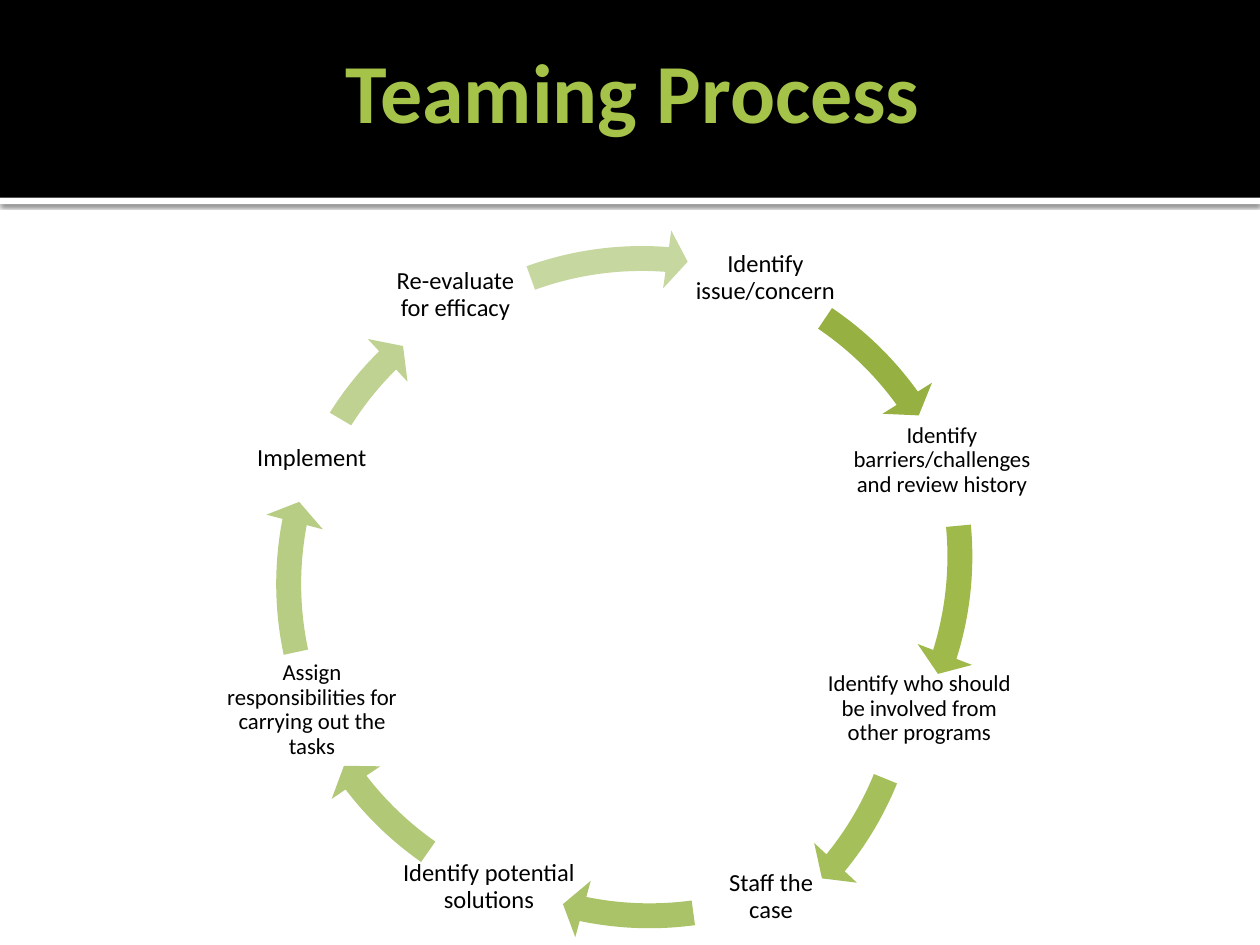
from lxml import etree
from pptx import Presentation
from pptx.dml.color import RGBColor
from pptx.enum import shapes, text
from pptx.oxml import ns
from pptx.util import Inches, Pt

BLACK = RGBColor(0x00, 0x00, 0x00)
WHITE = RGBColor(0xFF, 0xFF, 0xFF)
LIME = RGBColor(0xA5, 0xC2, 0x49)
FONT = "Calibri"
RING = 5.65

STEPS = [
    ("Identify issue/concern", 14, (5.43, 1.9, 1.29, 0.61)),
    ("Identify barriers/challenges and review history", 13, (6.61, 3.28, 1.73, 0.75)),
    ("Identify who should be involved from other programs", 13, (6.5, 5.21, 1.59, 0.83)),
    ("Staff the case", 14, (5.67, 6.84, 0.9, 0.56)),
    ("Identify potential solutions", 14, (3.14, 6.77, 1.48, 0.54)),
    ("Assign responsibilities for carrying out the tasks", 13, (1.68, 5.18, 1.59, 0.91)),
    ("Implement", 14, (1.96, 3.29, 1.03, 0.69)),
    ("Re-evaluate for efficacy", 14, (3.06, 1.98, 1.11, 0.72)),
]
ARROWS = [
    ((2.27, 1.85, RING, RING), 304.08, 324.28, RGBColor(0x96, 0xB0, 0x42)),
    ((2.2, 1.59, RING, RING), 354.64, 17.48, RGBColor(0x9F, 0xBA, 0x4B)),
    ((1.8, 2.38, RING, RING), 22.1, 39.31, RGBColor(0xA5, 0xBF, 0x5A)),
    ((2.33, 1.85, RING, RING), 82.29, 101.74, RGBColor(0xAB, 0xC3, 0x68)),
    ((2.06, 1.81, RING, RING), 124.96, 142.57, RGBColor(0xB1, 0xC8, 0x76)),
    ((2.06, 1.81, RING, RING), 167.95, 190.93, RGBColor(0xB8, 0xCD, 0x84)),
    ((2.08, 1.85, 5.82, RING), 210.54, 223.49, RGBColor(0xBF, 0xD2, 0x92)),
    ((2.27, 1.82, RING, RING), 250.11, 274.43, RGBColor(0xC6, 0xD7, 0xA0)),
]


def add_filled(s, preset, box, color):
    sp = s.shapes.add_shape(preset, *map(Inches, box))
    sp.shadow.inherit = False
    sp.fill.solid()
    sp.fill.fore_color.rgb = color
    sp.line.fill.background()
    return sp


def add_label(s, box, words, size, color=BLACK, bold=False, spacing=0.9,
              insets=(0.02, 0.02, 0.02, 0.02)):
    tf = s.shapes.add_textbox(*map(Inches, box)).text_frame
    tf.word_wrap = True
    tf.vertical_anchor = text.MSO_ANCHOR.MIDDLE
    tf.margin_left, tf.margin_top, tf.margin_right, tf.margin_bottom = map(Inches, insets)
    p = tf.paragraphs[0]
    p.alignment = text.PP_ALIGN.CENTER
    p.line_spacing = spacing
    r = p.add_run()
    r.text = words
    r.font.name = FONT
    r.font.size = Pt(size)
    r.font.bold = bold
    r.font.color.rgb = color


def add_shadow(sp, blur, distance):
    effects = sp.element.spPr.find(ns.qn("a:effectLst"))
    shadow = etree.SubElement(effects, ns.qn("a:outerShdw"), blurRad=str(Pt(blur)),
                              dist=str(Pt(distance)), dir="5400000", rotWithShape="0")
    color = etree.SubElement(shadow, ns.qn("a:srgbClr"), val=str(BLACK))
    etree.SubElement(color, ns.qn("a:alpha"), val="60000")


def add_header(s, left, top, width, height):
    rect = shapes.MSO_SHAPE.RECTANGLE
    strip = add_filled(s, rect, (left, top + height, width, 0.05), WHITE)
    add_shadow(strip, 2.5, 0.8)
    add_filled(s, rect, (left, top, width, height), BLACK)
    add_label(s, (left + 0.5, top + 0.17, width - 1, 1.08), "Teaming Process", 48,
              LIME, True, 1.0, (0.1, 0.05, 0.05, 0.05))


def add_arrow(s, box, start, end, color):
    sp = add_filled(s, shapes.MSO_SHAPE.CIRCULAR_ARROW, box, color)
    thickness, head_width = 0.035, 0.041
    angles = [degrees * 0.6 for degrees in (3.62, end, start)]
    for i, value in enumerate([thickness, *angles, head_width]):
        sp.adjustments[i] = value


def add_cycle(s, left, top):
    for (words, size, label_box), (arrow_box, start, end, color) in zip(STEPS, ARROWS):
        x, y, w, h = label_box
        add_label(s, (left + x, top + y, w, h), words, size)
        x, y, w, h = arrow_box
        add_arrow(s, (left + x, top + y, w, h), start, end, color)


def main():
    prs = Presentation()
    prs.slide_width, prs.slide_height = Inches(10), Inches(7.5)
    s = prs.slides.add_slide(prs.slide_layouts[6])
    add_header(s, 0, 0, 10, 1.57)
    add_cycle(s, 0, 0)
    prs.save("out.pptx")


if __name__ == "__main__":
    main()
